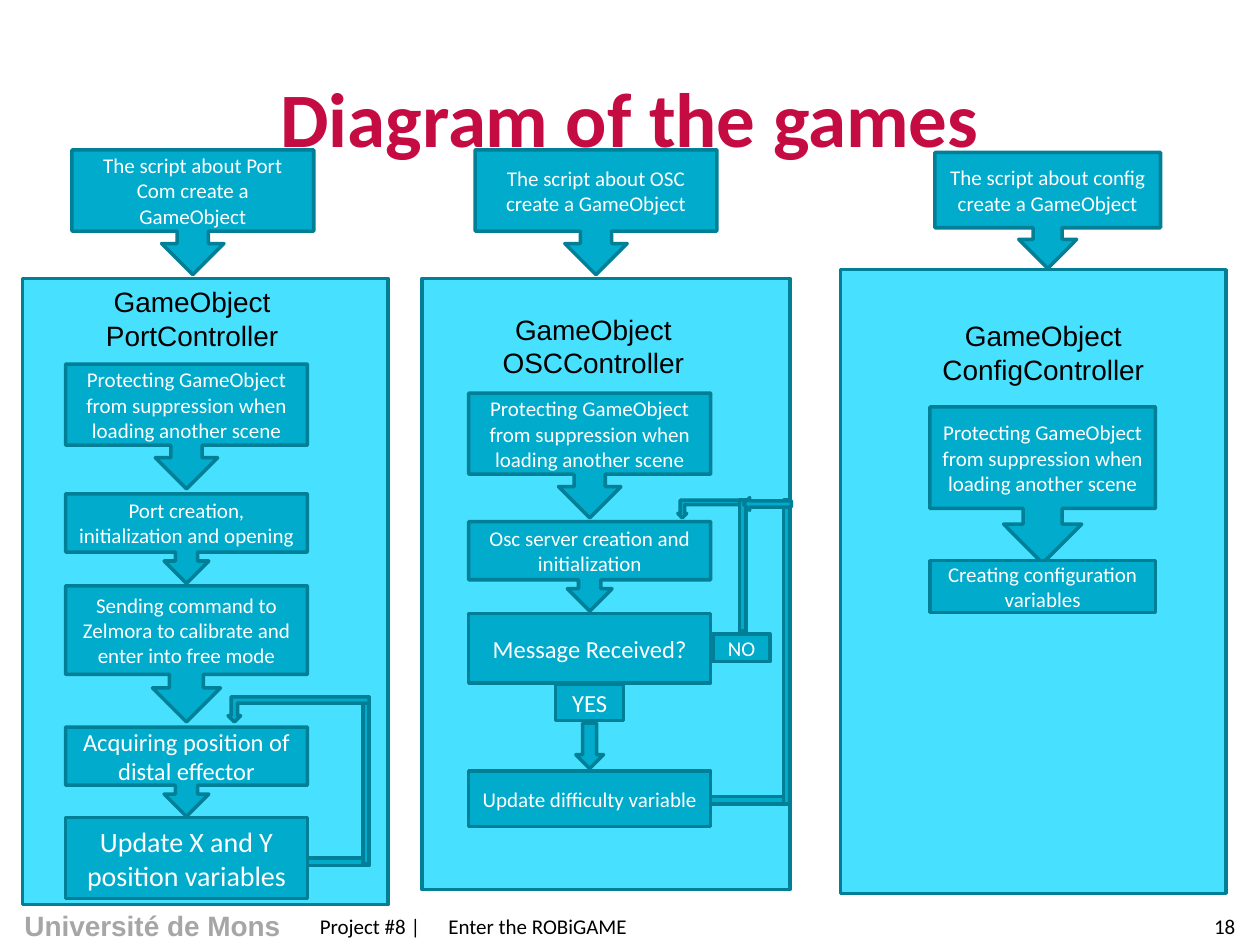
"""Build the slide "Diagram of the games": three flow columns with feedback loops."""
from lxml import etree
from pptx import Presentation
from pptx.dml.color import RGBColor
from pptx.enum.shapes import MSO_SHAPE
from pptx.enum.text import MSO_ANCHOR, PP_ALIGN
from pptx.oxml.ns import qn
from pptx.util import Inches, Pt

RECT, PROCESS = MSO_SHAPE.RECTANGLE, MSO_SHAPE.FLOWCHART_PROCESS
CALLOUT, DOWN = MSO_SHAPE.DOWN_ARROW_CALLOUT, MSO_SHAPE.DOWN_ARROW
BENT = MSO_SHAPE.BENT_UP_ARROW
LEFT, CENTER = PP_ALIGN.LEFT, PP_ALIGN.CENTER
TOP, MIDDLE = MSO_ANCHOR.TOP, MSO_ANCHOR.MIDDLE

CRIMSON = RGBColor(0xC4, 0x0C, 0x42)
GREY = RGBColor(0xA6, 0xA6, 0xA6)
BLACK = RGBColor(0, 0, 0)
WHITE = RGBColor(0xFF, 0xFF, 0xFF)
CYAN = RGBColor(0x47, 0xE1, 0xFF)
BLUE = RGBColor(0x00, 0xAB, 0xCC)
TEAL = RGBColor(0x00, 0x7F, 0x97)

SLIDE_W, SLIDE_H = 10, 7.5
FOOTER_TOP, FOOTER_H = 7.2, 0.3
FOOTER_TAB = 1.02
PROTECT = "Protecting GameObject from suppression when loading another scene"

# Steps: kind, top, height, text size, text
COLUMNS = [
    {"panel": (0.18, 2.21, 2.9, 4.97),
     "heading": (0.71, 2.21, 1.63, 0.64), "lines": ["GameObject PortController"],
     "start": (0.57, 1.19, 0.99, "The script about Port Com create a GameObject"),
     "left": 0.52, "width": 1.92,
     "steps": [
         (CALLOUT, 2.89, 0.99, 12, PROTECT),
         (CALLOUT, 3.92, 0.71, 12, "Port creation, initialization and opening"),
         (CALLOUT, 4.65, 1.08, 12,
          "Sending command to Zelmora to calibrate and enter into free mode"),
         (CALLOUT, 5.77, 0.71, 14, "Acquiring position of distal effector"),
         (RECT, 6.49, 0.64, 16, "Update X and Y position variables")]},
    {"panel": (3.35, 2.21, 2.92, 4.85),
     "heading": (3.83, 2.43, 1.76, 0.64), "lines": ["GameObject", "OSCController"],
     "start": (3.77, 1.19, 0.99, "The script about OSC create a GameObject"),
     "left": 3.72, "width": 1.92,
     "steps": [
         (CALLOUT, 3.12, 0.99, 12, PROTECT),
         (CALLOUT, 4.14, 0.71, 12, "Osc server creation and initialization"),
         (PROCESS, 4.87, 0.55, 14, "Message Received?"),
         (RECT, 6.12, 0.44, 12, "Update difficulty variable")]},
    {"panel": (6.67, 2.14, 3.06, 4.95),
     "heading": (7.34, 2.48, 1.88, 0.64), "lines": ["GameObject", "ConfigController"],
     "start": (7.42, 1.21, 0.92, "The script about config create a GameObject"),
     "left": 7.38, "width": 1.79,
     "steps": [
         (CALLOUT, 3.23, 1.24, 12, PROTECT),
         (RECT, 4.45, 0.41, 12, "Creating configuration variables")]},
]

# Branch labels: box, text size, text
BRANCHES = [((4.41, 5.43, 0.54, 0.29), 14, "YES"),
            ((5.66, 5.03, 0.45, 0.22), 12, "NO")]

# Loop pieces: kind, box, rotation
LOOPS = [
    (BENT, (5.38, 3.97, 0.53, 0.14), 180),
    (RECT, (5.87, 3.97, 0.05, 1.04), 0),
    (DOWN, (4.57, 5.74, 0.22, 0.36), 0),
    (RECT, (5.64, 6.32, 0.58, 0.06), 0),
    (RECT, (6.22, 3.97, 0.05, 2.41), 0),
    (DOWN, (6.04, 3.81, 0.1, 0.38), 90),
    (RECT, (2.44, 6.81, 0.49, 0.06), 0),
    (RECT, (2.88, 5.53, 0.05, 1.33), 0),
    (BENT, (1.81, 5.53, 1.12, 0.2), 180),
]


def write(s, lines, size, color, font="Calibri", bold=False, align=CENTER, anchor=MIDDLE):
    tf = s.text_frame
    tf.word_wrap = True
    tf.vertical_anchor = anchor
    for i, line in enumerate(lines):
        p = tf.add_paragraph() if i else tf.paragraphs[0]
        p.text = line
        p.alignment = align
        p.font.size, p.font.name, p.font.bold = Pt(size), font, bold
        p.font.color.rgb = color


def add_text(slide, box, lines, size, color, **style):
    s = slide.shapes.add_textbox(*map(Inches, box))
    write(s, lines, size, color, **style)
    return s


def add_block(slide, kind, box, fill=BLUE, rotation=0):
    s = slide.shapes.add_shape(kind, *map(Inches, box))
    s.shadow.inherit = False
    s.fill.solid()
    s.fill.fore_color.rgb = fill
    s.line.color.rgb = TEAL
    s.line.width = Pt(2)
    s.rotation = rotation
    return s


def add_column(slide, col):
    add_block(slide, RECT, col["panel"], CYAN)
    add_text(slide, col["heading"], col["lines"], 16, BLACK, font="Arial", anchor=TOP)
    left, top, height, text = col["start"]
    s = add_block(slide, CALLOUT, (left, top, col["width"], height))
    write(s, [text], 12, WHITE)
    for kind, top, height, size, text in col["steps"]:
        s = add_block(slide, kind, (col["left"], top, col["width"], height))
        write(s, [text], size, WHITE)


def add_footer(slide):
    add_text(slide, (-0.01, 7.16, 2.44, 0.37), ["Université de Mons"], 16, GREY,
             font="Arial", bold=True, anchor=TOP)
    s = add_text(slide, (2.44, FOOTER_TOP, 7, FOOTER_H), [""], 12, BLACK, align=LEFT)
    p = s.text_frame.paragraphs[0]
    tabs = etree.SubElement(p._p.get_or_add_pPr(), qn("a:tabLst"))
    etree.SubElement(tabs, qn("a:tab"), pos=str(Inches(FOOTER_TAB)), algn="l")
    pPr = p._p.pPr
    pPr.insert(0, tabs)
    p.text = "Project #8 |\tEnter the ROBiGAME"
    add_text(slide, (9.44, FOOTER_TOP, 0.56, FOOTER_H), ["18"], 12, BLACK)


def main():
    prs = Presentation()
    prs.slide_width, prs.slide_height = Inches(SLIDE_W), Inches(SLIDE_H)
    slide = prs.slides.add_slide(prs.slide_layouts[6])
    add_footer(slide)
    add_text(slide, (0.5, 0.3, 9, 1.25), ["Diagram of the games"], 44, CRIMSON, bold=True)
    for col in COLUMNS:
        add_column(slide, col)
    for box, size, text in BRANCHES:
        write(add_block(slide, RECT, box), [text], size, WHITE)
    for kind, box, rotation in LOOPS:
        add_block(slide, kind, box, rotation=rotation)
    prs.save("out.pptx")


if __name__ == "__main__":
    main()
